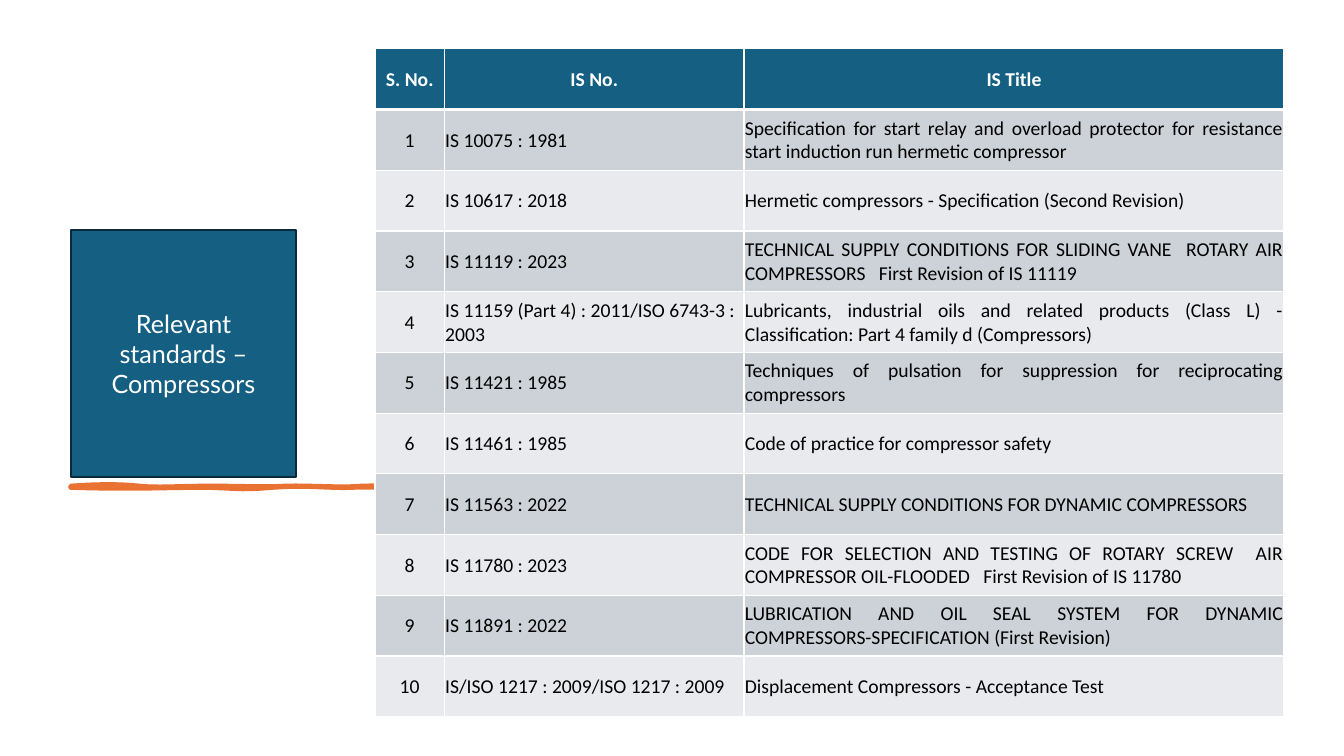
from lxml import etree
from pptx import Presentation
from pptx.dml.color import RGBColor
from pptx.enum.text import MSO_ANCHOR, MSO_AUTO_SIZE, PP_ALIGN
from pptx.oxml import parse_xml
from pptx.oxml.ns import nsdecls, qn
from pptx.util import Cm, Pt

LEFT, CENTER, JUSTIFY = PP_ALIGN.LEFT, PP_ALIGN.CENTER, PP_ALIGN.JUSTIFY
MIDDLE = MSO_ANCHOR.MIDDLE
NO_AUTOFIT = MSO_AUTO_SIZE.NONE
TITLE_ONLY = 5

BLUE, DARK_BLUE, ORANGE = "156082", "092A39", "E97132"
WHITE, BLACK = "FFFFFF", "000000"
BANDS = ("CCD2D8", "E8EAED")

COLUMN_WIDTHS = (1.75, 7.55, 13.61)
ROW_HEIGHT = 1.53
HEADERS = ("S. No.", "IS No.", "IS Title")
STANDARDS = (
    ("IS 10075 : 1981", "Specification for start relay and overload protector for resistance start induction run hermetic compressor"),
    ("IS 10617 : 2018", "Hermetic compressors - Specification (Second Revision)"),
    ("IS 11119 : 2023", "TECHNICAL SUPPLY CONDITIONS FOR SLIDING VANE  ROTARY AIR COMPRESSORS   First Revision of IS 11119"),
    ("IS 11159 (Part 4) : 2011/ISO 6743-3 : 2003", "Lubricants, industrial oils and related products (Class L) - Classification: Part 4 family d (Compressors)"),
    ("IS 11421 : 1985", "Techniques of pulsation for suppression for reciprocating compressors"),
    ("IS 11461 : 1985", "Code of practice for compressor safety"),
    ("IS 11563 : 2022", "TECHNICAL SUPPLY CONDITIONS FOR DYNAMIC COMPRESSORS"),
    ("IS 11780 : 2023", "CODE FOR SELECTION AND TESTING OF ROTARY SCREW  AIR COMPRESSOR OIL-FLOODED   First Revision of IS 11780"),
    ("IS 11891 : 2022", "LUBRICATION AND OIL SEAL SYSTEM FOR DYNAMIC COMPRESSORS-SPECIFICATION (First Revision)"),
    ("IS/ISO 1217 : 2009/ISO 1217 : 2009", "Displacement Compressors - Acceptance Test"),
)

BRUSH_START = (1.78, 12.24)
BRUSH_CURVES = (
    ((2.46, 12.19), (3.07, 12.19), (3.51, 12.24)),
    ((3.94, 12.29), (4.5, 12.24), (5.31, 12.24)),
    ((6.12, 12.24), (6.6, 12.27), (7.21, 12.24)),
    ((7.82, 12.22), (8.61, 12.29), (9.12, 12.24)),
    ((9.63, 12.22), (10.46, 12.27), (10.82, 12.24)),
    ((10.82, 12.27), (10.82, 12.29), (10.82, 12.29)),
    ((10.36, 12.32), (9.25, 12.27), (8.84, 12.29)),
    ((8.43, 12.32), (7.72, 12.22), (6.86, 12.29)),
    ((5.97, 12.37), (5.87, 12.29), (5.05, 12.29)),
    ((4.22, 12.29), (3.35, 12.34), (1.78, 12.29)),
)
CURVE_STEPS = 8


def color(value):
    return RGBColor.from_string(value)


def paint(shape, fill, line, width):
    shape.fill.solid()
    shape.fill.fore_color.rgb = color(fill)
    shape.line.color.rgb = color(line)
    shape.line.width = Pt(width)


def write(frame, text, font, size, ink, align, bold=False):
    paragraph = frame.paragraphs[0]
    paragraph.alignment = align
    paragraph.line_spacing = 1.0
    run = paragraph.add_run()
    run.text = text
    run.font.name = font
    run.font.size = Pt(size)
    run.font.bold = bold
    run.font.color.rgb = color(ink)


def curve_points(start, curves):
    for first, second, end in curves:
        for step in range(1, CURVE_STEPS + 1):
            t = step / CURVE_STEPS
            yield tuple(
                Cm((1 - t) ** 3 * a + 3 * t * (1 - t) ** 2 * b + 3 * t * t * (1 - t) * c + t ** 3 * d)
                for a, b, c, d in zip(start, first, second, end)
            )
        start = end


def add_brush_line(slide):
    builder = slide.shapes.build_freeform(*map(Cm, BRUSH_START))
    builder.add_line_segments(list(curve_points(BRUSH_START, BRUSH_CURVES)), close=True)
    shape = builder.convert_to_shape()
    shape.shadow.inherit = False
    paint(shape, ORANGE, ORANGE, 3)


def format_title(slide, text):
    title = slide.shapes.title
    title.left, title.top = Cm(1.78), Cm(5.79)
    title.width, title.height = Cm(5.69), Cm(6.22)
    properties = title._element.spPr
    outline = parse_xml(f'<a:prstGeom {nsdecls("a")} prst="homePlate"><a:avLst/></a:prstGeom>')
    properties.find(qn("a:xfrm")).addnext(outline)
    paint(title, BLUE, DARK_BLUE, 1.5)
    frame = title.text_frame
    frame.word_wrap = True
    frame.auto_size = NO_AUTOFIT
    frame.vertical_anchor = MIDDLE
    write(frame, text, "Lato", 18, WHITE, CENTER)


def add_borders(cell, bottom):
    properties = cell._tc.get_or_add_tcPr()
    for side, width in (("lnL", 1), ("lnR", 1), ("lnT", 1), ("lnB", bottom)):
        line = etree.SubElement(properties, qn(f"a:{side}"), w=str(Pt(width)))
        fill = etree.SubElement(line, qn("a:solidFill"))
        etree.SubElement(fill, qn("a:srgbClr"), val=WHITE)


def fill_cell(cell, text, fill, ink, align, header):
    add_borders(cell, 3 if header else 1)
    cell.fill.solid()
    cell.fill.fore_color.rgb = color(fill)
    cell.margin_left = cell.margin_right = cell.margin_top = Cm(0.02)
    cell.margin_bottom = 0
    cell.vertical_anchor = MIDDLE
    write(cell.text_frame, text, "Calibri", 14, ink, align, header)


def add_standards_table(slide):
    rows = [HEADERS] + [(str(number), *standard) for number, standard in enumerate(STANDARDS, 1)]
    table = slide.shapes.add_table(
        len(rows), len(HEADERS), Cm(9.45), Cm(1.23),
        Cm(sum(COLUMN_WIDTHS)), Cm(ROW_HEIGHT * len(rows)),
    ).table
    for column, width in zip(table.columns, COLUMN_WIDTHS):
        column.width = Cm(width)
    for index, texts in enumerate(rows):
        table.rows[index].height = Cm(ROW_HEIGHT)
        header = index == 0
        fill = BLUE if header else BANDS[(index - 1) % 2]
        ink = WHITE if header else BLACK
        aligns = (CENTER,) * 3 if header else (CENTER, LEFT, JUSTIFY)
        for position, (text, align) in enumerate(zip(texts, aligns)):
            fill_cell(table.cell(index, position), text, fill, ink, align, header)


def main():
    presentation = Presentation()
    presentation.slide_width, presentation.slide_height = Cm(33.87), Cm(19.05)
    slide = presentation.slides.add_slide(presentation.slide_layouts[TITLE_ONLY])
    add_brush_line(slide)
    add_standards_table(slide)
    format_title(slide, "Relevant standards – Compressors")
    presentation.save("out.pptx")


if __name__ == "__main__":
    main()
